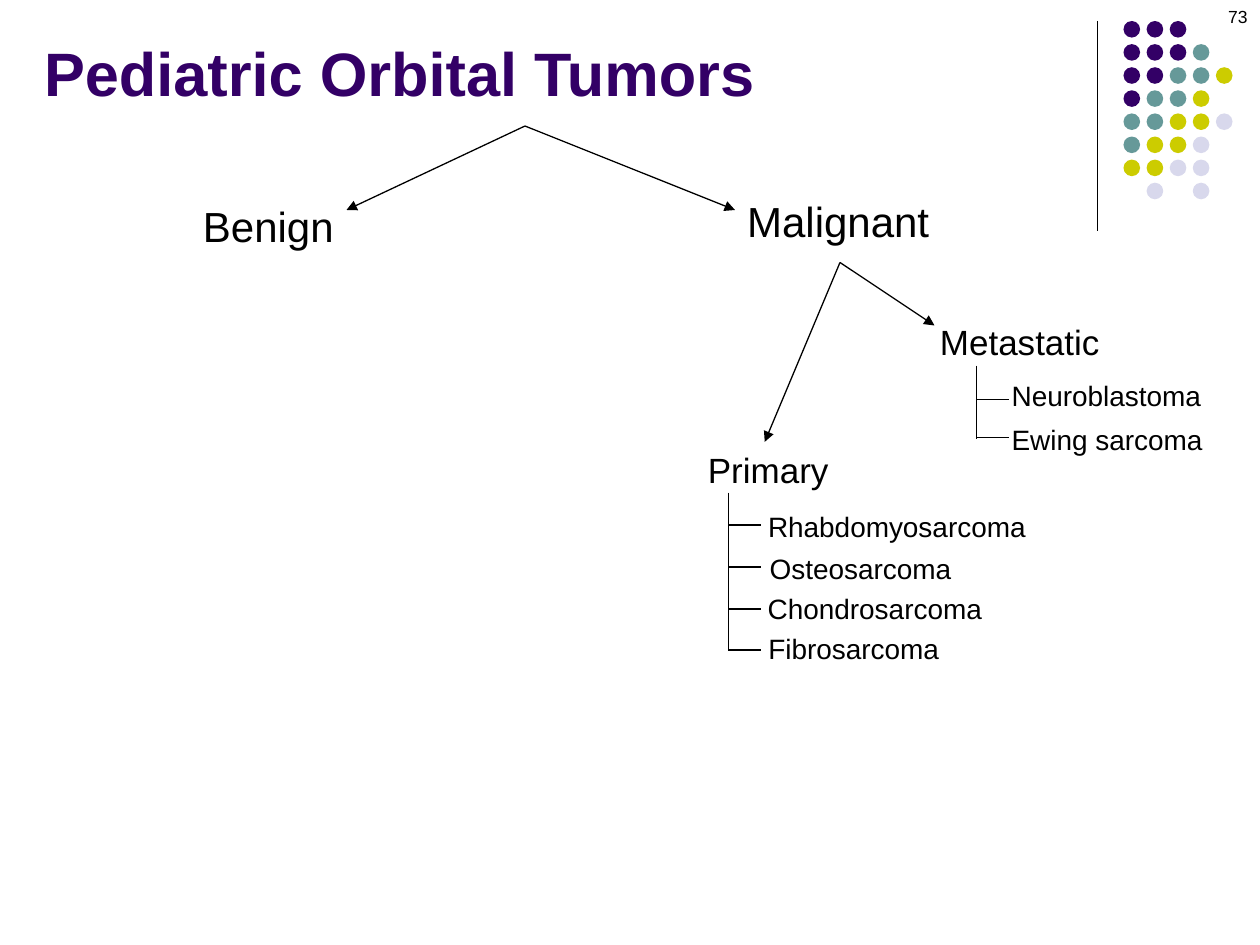
from lxml import etree
from pptx import Presentation
from pptx.dml.color import RGBColor
from pptx.enum.shapes import MSO_CONNECTOR as CONN, MSO_SHAPE as SHAPE
from pptx.enum.text import MSO_ANCHOR as ANCHOR, MSO_AUTO_SIZE as AUTO, PP_ALIGN as ALIGN
from pptx.oxml.ns import qn
from pptx.util import Pt

COLORS = {"text": "000000", "P": "330066", "T": "669999", "Y": "CCCC00", "L": "D8D8EC"}


def add_line(x1, y1, x2, y2, arrow=False):
    c = s.shapes.add_connector(CONN.STRAIGHT, Pt(x1), Pt(y1), Pt(x2), Pt(y2))
    c.line.color.rgb = RGBColor.from_string(COLORS["text"])
    c.line.width = Pt(0.75)
    if arrow:
        etree.SubElement(c.line._get_or_add_ln(), qn("a:tailEnd"), type="triangle")
    etree.SubElement(c._element.spPr, qn("a:effectLst"))


def add_label(text, x, y, w, h, size, align=ALIGN.LEFT, wrap=False):
    tf = s.shapes.add_textbox(Pt(x), Pt(y), Pt(w), Pt(h)).text_frame
    tf.word_wrap = wrap
    tf.auto_size = AUTO.NONE if wrap else AUTO.SHAPE_TO_FIT_TEXT
    p = tf.paragraphs[0]
    p.text = text
    p.alignment = align
    p.font.name = "Arial"
    p.font.size = Pt(size)
    p.font.color.rgb = RGBColor.from_string(COLORS["text"])


prs = Presentation()
prs.slide_width, prs.slide_height = Pt(720), Pt(540)
s = prs.slides.add_slide(prs.slide_layouts[5])

# Corner decoration: rule and dot grid
add_line(627, 12, 627, 132)
DOTS = ["PPP", "PPPT", "PPTTY", "PTTY", "TTYYL", "TYYL", "YYLL", " L L"]
for row, letters in enumerate(DOTS):
    for col, letter in enumerate(letters):
        if letter == " ":
            continue
        dot = s.shapes.add_shape(SHAPE.OVAL, Pt(642 + 13.2 * col), Pt(12 + 13.2 * row),
                                 Pt(9.5), Pt(9.5))
        dot.shadow.inherit = False
        dot.fill.solid()
        dot.fill.fore_color.rgb = RGBColor.from_string(COLORS[letter])
        dot.line.fill.background()

# Title
title = s.shapes.title
title.left, title.top, title.width, title.height = Pt(18), Pt(9.5), Pt(630), Pt(56)
tf = title.text_frame
tf.vertical_anchor = ANCHOR.BOTTOM
tf.auto_size = AUTO.NONE
p = tf.paragraphs[0]
p.text = "Pediatric Orbital Tumors"
p.alignment = ALIGN.LEFT
p.font.name = "Arial"
p.font.size = Pt(35)
p.font.bold = True
p.font.color.rgb = RGBColor.from_string(COLORS["P"])

# Page number
add_label("73", 552, 0, 168, 36, 10, ALIGN.RIGHT, wrap=True)

# Categories
add_label("Benign", 108.7, 111, 89.3, 36, 24, ALIGN.CENTER)
add_label("Malignant", 419.8, 108, 118.8, 36, 24)
add_label("Primary", 397.4, 252.7, 84.2, 31.5, 20)
add_label("Metastatic", 530, 179.5, 106.5, 31.5, 20)

# Arrows between levels
for x1, y1, x2, y2 in [(300, 72, 198, 120), (300, 72, 420, 120),
                       (480, 150, 437, 252.5), (480, 150, 534, 186)]:
    add_line(x1, y1, x2, y2, arrow=True)

# Tumor lists: trunk x, top and bottom, then (name, branch y, label x, label y, label width)
BRANCHES = [
    (416.2, 281.5, 371.5, [("Rhabdomyosarcoma", 300, 431.8, 287.5, 163.4),
                           ("Osteosarcoma", 324, 432.8, 311.8, 119.5),
                           ("Chondrosarcoma", 348, 431.6, 334.4, 138.2),
                           ("Fibrosarcoma", 371.5, 432, 357.6, 113)]),
    (558, 209, 251, [("Neuroblastoma", 228.5, 571, 213, 123.8),
                     ("Ewing sarcoma", 250, 571, 237.8, 124.6)]),
]
for trunk, top, bottom, tumors in BRANCHES:
    add_line(trunk, top, trunk, bottom)
    for name, branch_y, x, y, w in tumors:
        add_line(trunk, branch_y, trunk + 18.5, branch_y)
        add_label(name, x, y, w, 26.6, 16)

prs.save("out.pptx")
